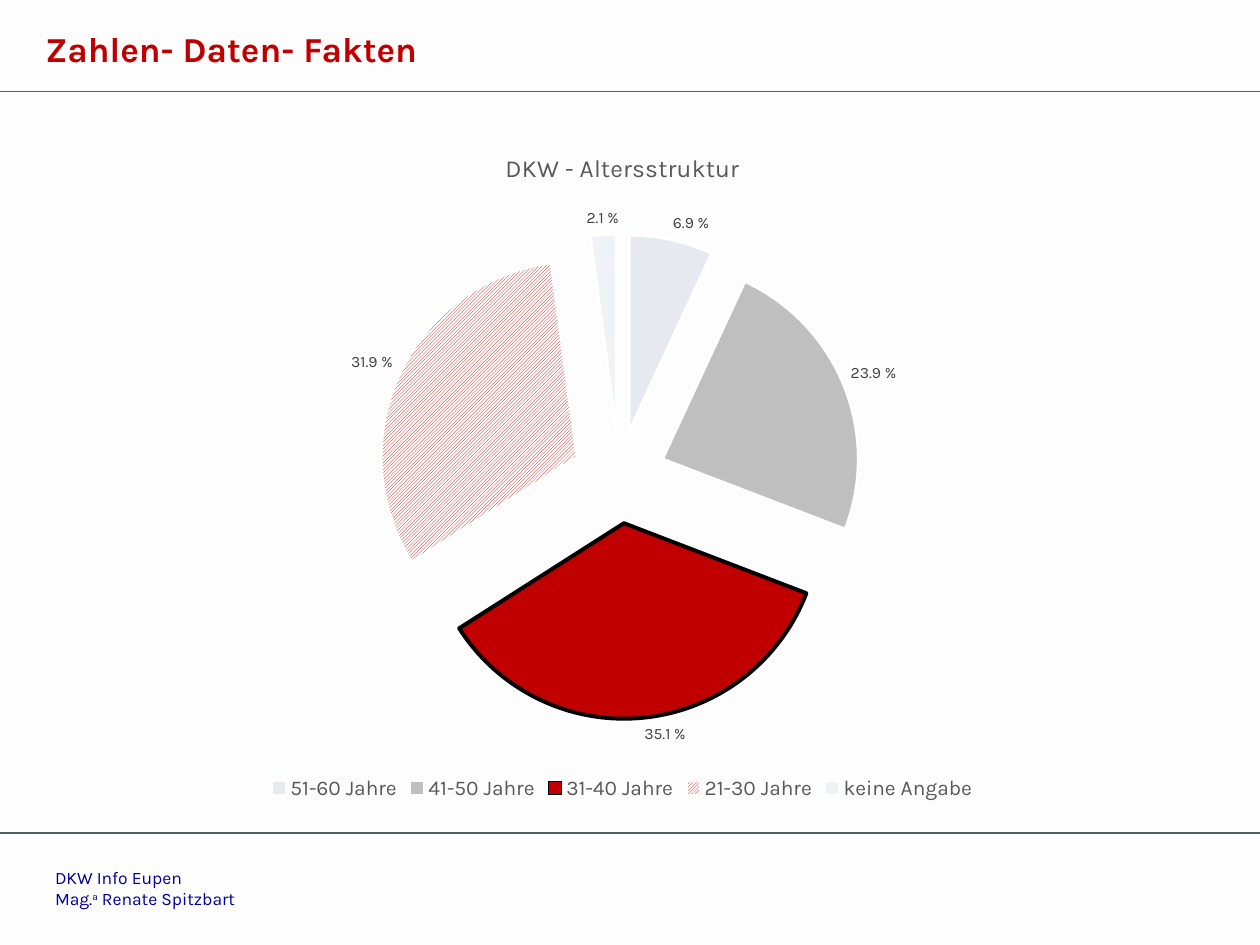
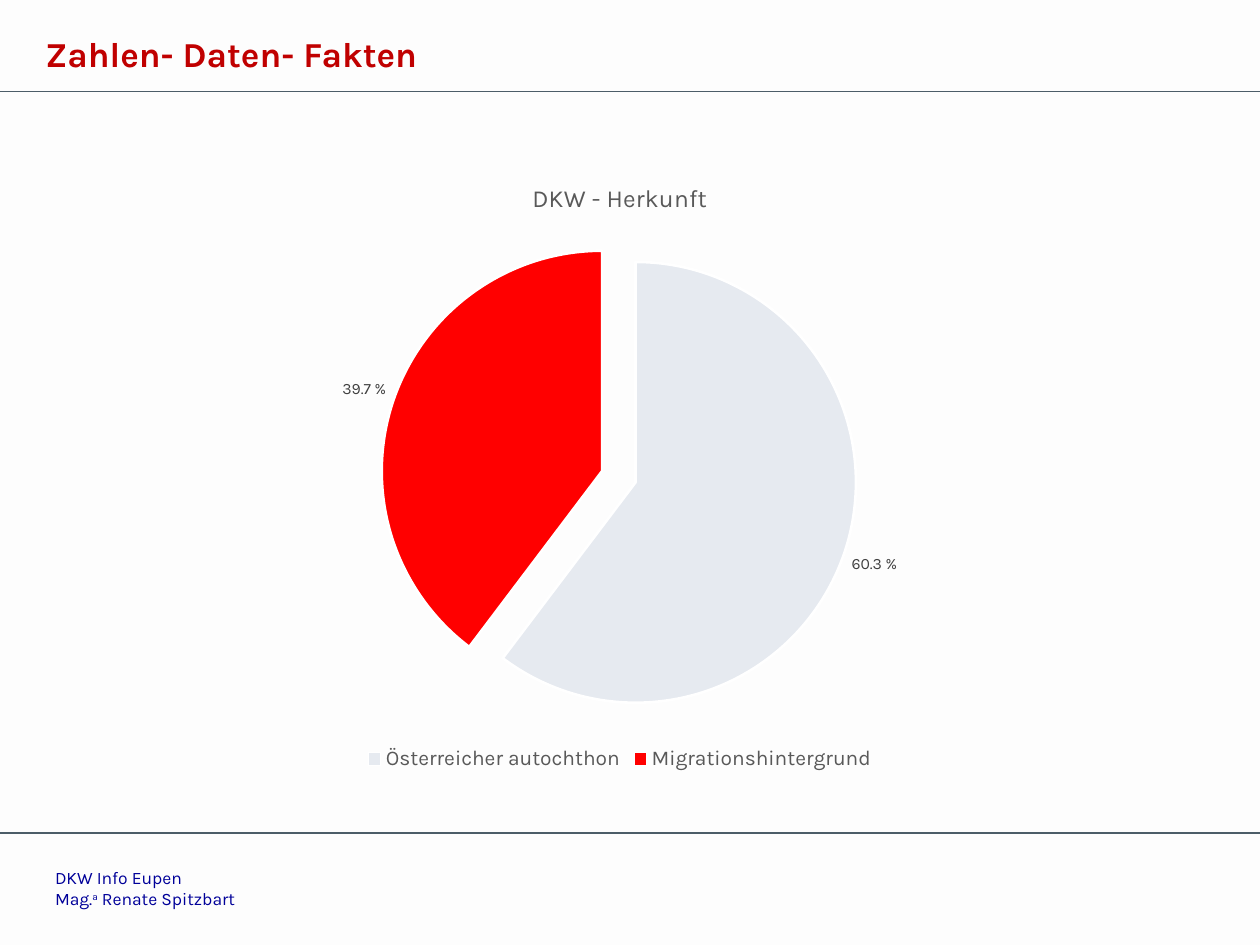
from lxml.etree import SubElement
from pptx import Presentation
from pptx.chart.data import CategoryChartData
from pptx.dml.color import RGBColor
from pptx.enum.chart import XL_CHART_TYPE, XL_LABEL_POSITION, XL_LEGEND_POSITION
from pptx.enum.dml import MSO_PATTERN
from pptx.enum.shapes import MSO_CONNECTOR
from pptx.enum.text import MSO_ANCHOR, PP_ALIGN
from pptx.oxml.ns import qn
from pptx.util import Cm, Pt

WIDTH, HEIGHT = 25.4, 19.05
TITLE_ONLY = 5


def color(hex_string):
    return RGBColor.from_string(hex_string)


class Deck:
    FONT = "Karla"
    RED = "C00000"
    BACKGROUND = "FDFDFD"
    RULE = "4C5D68"
    TITLE = {"size": Pt(20), "bold": True, "color": RED}
    FOOTER = {"size": Pt(10), "color": "000099"}
    CHART = {"size": Pt(10), "color": "000000"}
    CHART_TITLE = {"size": Pt(14), "bold": False, "color": "595959"}
    LEGEND = {"size": Pt(12), "color": "595959"}
    LABELS = {"size": Pt(9), "color": "404040"}

    def __init__(self):
        self.presentation = Presentation()
        self.presentation.slide_width = Cm(WIDTH)
        self.presentation.slide_height = Cm(HEIGHT)
        self.slide = None

    def format_font(self, font, style):
        for name, value in {"name": self.FONT, **style}.items():
            if name == "color":
                font.color.rgb = color(value)
            else:
                setattr(font, name, value)

    def new_slide(self, title, title_top):
        layout = self.presentation.slide_layouts[TITLE_ONLY]
        self.slide = self.presentation.slides.add_slide(layout)
        fill = self.slide.background.fill
        fill.solid()
        fill.fore_color.rgb = color(self.BACKGROUND)
        self.title(title, title_top)
        self.rule(1.85, 0.5)
        self.rule(16.79, 0.75)
        self.footer()

    def title(self, text, top):
        shape = self.slide.shapes.title
        box = {"left": 0.66, "top": top, "width": 11.3, "height": 1.12}
        for name, value in box.items():
            setattr(shape, name, Cm(value))
        frame = shape.text_frame
        frame.text = text
        frame.vertical_anchor = MSO_ANCHOR.TOP
        paragraph = frame.paragraphs[0]
        paragraph.alignment = PP_ALIGN.LEFT
        self.format_font(paragraph.runs[0].font, self.TITLE)

    def rule(self, top, weight):
        connector = self.slide.shapes.add_connector(
            MSO_CONNECTOR.STRAIGHT, Cm(WIDTH), Cm(top), Cm(0), Cm(top))
        connector.line.color.rgb = color(self.RULE)
        connector.line.width = Pt(weight)
        SubElement(connector._element.spPr, qn("a:effectLst"))

    def footer(self):
        shape = self.slide.shapes.add_textbox(Cm(0.86), Cm(17.35), Cm(4.34), Cm(1.12))
        shape.text_frame.word_wrap = False
        paragraph = shape.text_frame.paragraphs[0]
        self.add_run(paragraph, "DKW Info Eupen")
        paragraph.add_line_break()
        self.add_run(paragraph, "Mag.")
        superscript = self.add_run(paragraph, "a")
        superscript._r.get_or_add_rPr().set("baseline", "30000")
        self.add_run(paragraph, " Renate Spitzbart")

    def add_run(self, paragraph, text):
        run = paragraph.add_run()
        run.text = text
        self.format_font(run.font, self.FOOTER)
        return run

    def pie(self, title, box, slices, explosion, hatched=None, outlined=None):
        """Draw a pie; slices are (category, value, colour) rows."""
        data = CategoryChartData(number_format="0.0")
        data.categories = [category for category, _, _ in slices]
        data.add_series("Series 1", [value for _, value, _ in slices])
        chart = self.slide.shapes.add_chart(
            XL_CHART_TYPE.PIE, *map(Cm, box), data).chart
        self.format_font(chart.font, self.CHART)

        # Chart title and legend
        chart.has_title = True
        chart.chart_title.text_frame.text = title
        title_run = chart.chart_title.text_frame.paragraphs[0].runs[0]
        self.format_font(title_run.font, self.CHART_TITLE)
        chart.has_legend = True
        chart.legend.position = XL_LEGEND_POSITION.BOTTOM
        chart.legend.include_in_layout = False
        self.format_font(chart.legend.font, self.LEGEND)

        # Slices
        plot = chart.plots[0]
        plot.vary_by_categories = True
        series = plot.series[0]
        element = SubElement(series._element, qn("c:explosion"), val=str(explosion))
        series._element.find(qn("c:tx")).addnext(element)
        for index, (category, _, slice_color) in enumerate(slices):
            slice_format = series.points[index].format
            fill = slice_format.fill
            if category == hatched:
                fill.patterned()
                fill.pattern = MSO_PATTERN.DARK_UPWARD_DIAGONAL
                fill.back_color.rgb = color("FFFFFF")
            else:
                fill.solid()
            fill.fore_color.rgb = color(slice_color)
            strong = category == outlined
            slice_format.line.color.rgb = color("000000" if strong else "FFFFFF")
            slice_format.line.width = Pt(2.25 if strong else 1.5)

        # Value labels
        labels = series.data_labels
        label_values = {
            "show_value": True,
            "show_percentage": False,
            "position": XL_LABEL_POSITION.OUTSIDE_END,
            "number_format": '0.0" %"',
            "number_format_is_linked": False,
        }
        for name, value in label_values.items():
            setattr(labels, name, value)
        self.format_font(labels.font, self.LABELS)


def main():
    deck = Deck()
    heading = "Zahlen- Daten- Fakten"

    # Age structure
    deck.new_slide(heading, title_top=0.43)
    deck.pie(
        "DKW - Altersstruktur", (2.72, 2.57, 19.66, 13.67),
        [("51-60 Jahre", 6.9, "E6EAF0"),
         ("41-50 Jahre", 23.9, "BFBFBF"),
         ("31-40 Jahre", 35.1, deck.RED),
         ("21-30 Jahre", 31.9, deck.RED),
         ("keine Angabe", 2.1, "F0F3F6")],
        explosion=24, hatched="21-30 Jahre", outlined="31-40 Jahre")

    # Origin
    deck.new_slide(heading, title_top=0.53)
    deck.pie(
        "DKW - Herkunft", (2.82, 3.2, 19.35, 12.45),
        [("Österreicher autochthon", 60.3, "E6EAF0"),
         ("Migrationshintergrund", 39.7, "FF0000")],
        explosion=8)

    deck.presentation.save("out.pptx")


if __name__ == "__main__":
    main()
